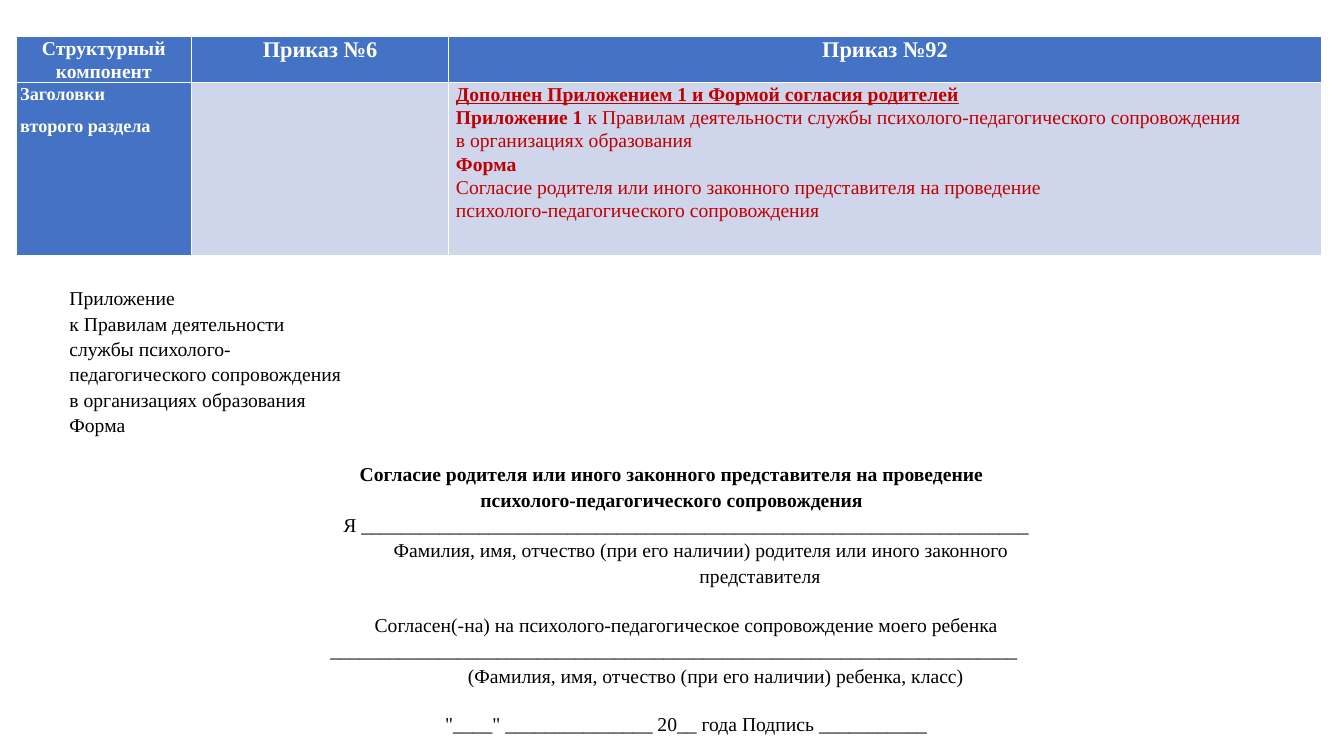
from dataclasses import dataclass

from pptx import Presentation
from pptx.dml.color import RGBColor
from pptx.enum.text import MSO_AUTO_SIZE, PP_ALIGN
from pptx.util import Cm, Pt


@dataclass(frozen=True)
class Theme:
    font: str = "Times New Roman"
    white: RGBColor = RGBColor(0xFF, 0xFF, 0xFF)
    black: RGBColor = RGBColor(0, 0, 0)
    red: RGBColor = RGBColor(0xC0, 0, 0)
    blue: RGBColor = RGBColor(0x44, 0x72, 0xC4)
    pale: RGBColor = RGBColor(0xCF, 0xD5, 0xEA)
    body: float = 14
    heading: float = 16
    row_label: float = 13
    line: float = 16.8  # height of one line of the form


THEME = Theme()


@dataclass(frozen=True)
class Line:
    """A paragraph: a bold lead, then plain text; indent and gap in points."""
    text: str = ""
    lead: str = ""
    size: float = THEME.body
    underline: bool = False
    align: PP_ALIGN | None = None
    indent: float = 0
    before: float = 0
    after: float = 0
    spacing: float = 1.07


@dataclass(frozen=True)
class Cell:
    lines: list[Line]
    fill: RGBColor
    color: RGBColor = THEME.white
    margin: float = 0.1


def header(text: str, size: float = THEME.heading) -> Cell:
    return Cell([Line(lead=text, size=size, align=PP_ALIGN.CENTER, after=8)], THEME.blue)


def centred(text: str = "", lead: str = "", indent: float = 0, before: float = 0) -> Line:
    return Line(text, lead, align=PP_ALIGN.CENTER, indent=indent, before=before, spacing=1.08)


COLUMNS = [4.41, 6.49, 21.99]
ROWS = [1.04, 4.37]
TABLE = [
    [header("Структурный компонент", THEME.body), header("Приказ №6"), header("Приказ №92")],
    [
        Cell([Line(lead=t, size=THEME.row_label, after=8)
              for t in ("Заголовки", "второго раздела")], THEME.blue),
        Cell([], THEME.pale),
        Cell([
            Line(lead="Дополнен Приложением 1 и Формой согласия родителей", underline=True),
            Line("к Правилам деятельности службы психолого-педагогического сопровождения",
                 lead="Приложение 1 "),
            Line("в организациях образования"),
            Line(lead="Форма"),
            Line("Согласие родителя или иного законного представителя на проведение"),
            Line("психолого-педагогического сопровождения"),
        ], THEME.pale, THEME.red, 0.18),
    ],
]

FORM = [
    *(Line(t, align=PP_ALIGN.JUSTIFY, spacing=1.08) for t in (
        "Приложение",
        "к Правилам деятельности",
        "службы психолого-",
        "педагогического сопровождения",
        "в организациях образования",
        "Форма",
    )),
    centred(lead="Согласие родителя или иного законного представителя на проведение",
            before=THEME.line),
    centred(lead="психолого-педагогического сопровождения"),
    centred("Я " + "_" * 68, indent=21),
    centred("Фамилия, имя, отчество (при его наличии) родителя или иного законного", indent=42),
    centred("представителя", indent=126),
    centred("Согласен(-на) на психолого-педагогическое сопровождение моего ребенка",
            indent=21, before=THEME.line),
    centred("_" * 70, indent=3.5),
    centred("(Фамилия, имя, отчество (при его наличии) ребенка, класс)", indent=63),
    centred('"____" _______________ 20__ года Подпись ___________', indent=21, before=THEME.line),
]


def write_lines(tf, lines: list[Line], color: RGBColor) -> None:
    for i, line in enumerate(lines):
        p = tf.paragraphs[0] if i == 0 else tf.add_paragraph()
        p.alignment = line.align
        p.line_spacing = line.spacing
        p.space_before, p.space_after = Pt(line.before), Pt(line.after)
        if line.indent:
            p._p.get_or_add_pPr().set("marL", str(Pt(line.indent)))
        p.font.name, p.font.size = THEME.font, Pt(line.size)
        p.font.color.rgb = color
        p.font.underline = line.underline
        for text, bold in ((line.lead, True), (line.text, False)):
            if text:
                r = p.add_run()
                r.text = text
                r.font.bold = bold


def add_comparison(s) -> None:
    frame = s.shapes.add_table(len(ROWS), len(COLUMNS), Cm(0.41), Cm(0.91),
                               Cm(sum(COLUMNS)), Cm(sum(ROWS)))
    table = frame.table
    table.first_col = True
    for column, width in zip(table.columns, COLUMNS):
        column.width = Cm(width)
    for row, height, cells in zip(table.rows, ROWS, TABLE):
        row.height = Cm(height)
        for target, cell in zip(row.cells, cells):
            target.fill.solid()
            target.fill.fore_color.rgb = cell.fill
            target.margin_left = target.margin_right = Cm(cell.margin)
            target.margin_top = target.margin_bottom = 0
            write_lines(target.text_frame, cell.lines, cell.color)


def add_consent_form(s) -> None:
    tf = s.shapes.add_textbox(Cm(1.5), Cm(7.04), Cm(30.86), Cm(11.02)).text_frame
    tf.word_wrap = True
    tf.auto_size = MSO_AUTO_SIZE.SHAPE_TO_FIT_TEXT
    write_lines(tf, FORM, THEME.black)


def main() -> None:
    prs = Presentation()
    prs.slide_width, prs.slide_height = Cm(33.87), Cm(19.05)
    s = prs.slides.add_slide(prs.slide_layouts[6])
    add_comparison(s)
    add_consent_form(s)
    prs.save("out.pptx")


if __name__ == "__main__":
    main()
